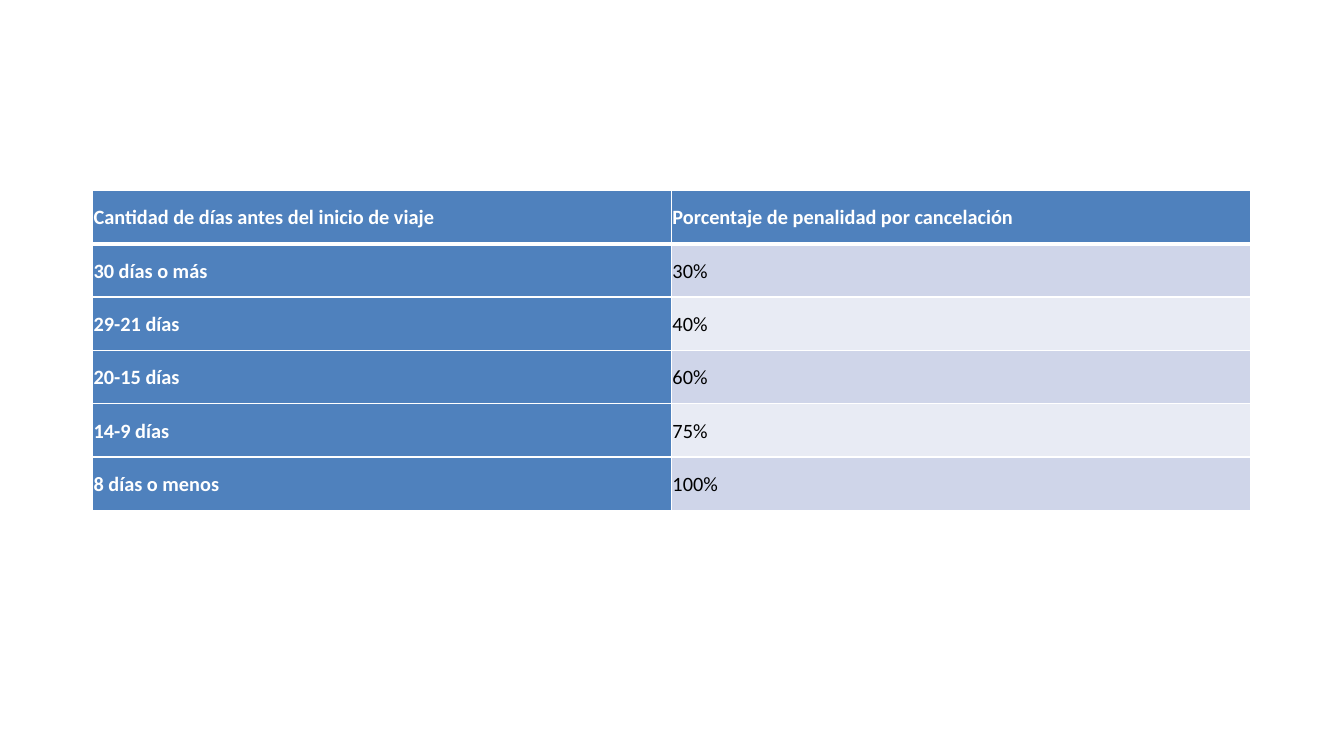
import pptx
import pptx.dml.color
import pptx.enum.text
import pptx.oxml.ns
import pptx.util
import lxml.etree

Cm = pptx.util.Cm
Pt = pptx.util.Pt
RGBColor = pptx.dml.color.RGBColor

PENALTIES = [
    ("Cantidad de días antes del inicio de viaje", "Porcentaje de penalidad por cancelación"),
    ("30 días o más", "30%"),
    ("29-21 días", "40%"),
    ("20-15 días", "60%"),
    ("14-9 días", "75%"),
    ("8 días o menos", "100%"),
]

WHITE = RGBColor(0xFF, 0xFF, 0xFF)
BLACK = RGBColor(0x00, 0x00, 0x00)
BLUE = RGBColor(0x4F, 0x81, 0xBD)
BANDS = [RGBColor(0xE8, 0xEB, 0xF4), RGBColor(0xCF, 0xD5, 0xE9)]

LEFT, TOP = Cm(1.93), Cm(3.97)
COLUMN_WIDTH, ROW_HEIGHT = Cm(12.06), Cm(1.11)
THIN, THICK = Pt(0.96), Pt(3)


def add_border(cell, side, width):
    qn = pptx.oxml.ns.qn
    properties = cell._tc.get_or_add_tcPr()
    line = lxml.etree.SubElement(properties, qn(f"a:ln{side}"), w=str(int(width)))
    fill = lxml.etree.SubElement(line, qn("a:solidFill"))
    lxml.etree.SubElement(fill, qn("a:srgbClr"), val=str(WHITE))


def format_cell(cell, text, row, column):
    emphasized = row == 0 or column == 0
    widths = {
        "L": THIN,
        "R": THIN,
        "T": THICK if row == 1 else THIN,
        "B": THICK if row == 0 else THIN,
    }
    for side, width in widths.items():
        add_border(cell, side, width)
    cell.fill.solid()
    cell.fill.fore_color.rgb = BLUE if emphasized else BANDS[row % 2]

    cell.vertical_anchor = pptx.enum.text.MSO_ANCHOR.MIDDLE
    cell.margin_left = cell.margin_right = Cm(0.02)
    cell.margin_top = cell.margin_bottom = Cm(0.13)
    cell.text_frame.text = text
    paragraph = cell.text_frame.paragraphs[0]
    paragraph.line_spacing = 1.07
    paragraph.space_after = Pt(8)
    font = paragraph.runs[0].font
    font.name = "Calibri"
    font.size = Pt(12)
    font.bold = emphasized
    font.color.rgb = WHITE if emphasized else BLACK


def main():
    presentation = pptx.Presentation()
    presentation.slide_width = Cm(28)
    presentation.slide_height = Cm(15.75)
    slide = presentation.slides.add_slide(presentation.slide_layouts[6])

    rows, columns = len(PENALTIES), len(PENALTIES[0])
    penalty_table = slide.shapes.add_table(
        rows, columns, LEFT, TOP, COLUMN_WIDTH * columns, ROW_HEIGHT * rows
    ).table
    penalty_table.first_col = True
    for row, texts in enumerate(PENALTIES):
        for column, text in enumerate(texts):
            format_cell(penalty_table.cell(row, column), text, row, column)

    presentation.save("out.pptx")


if __name__ == "__main__":
    main()
